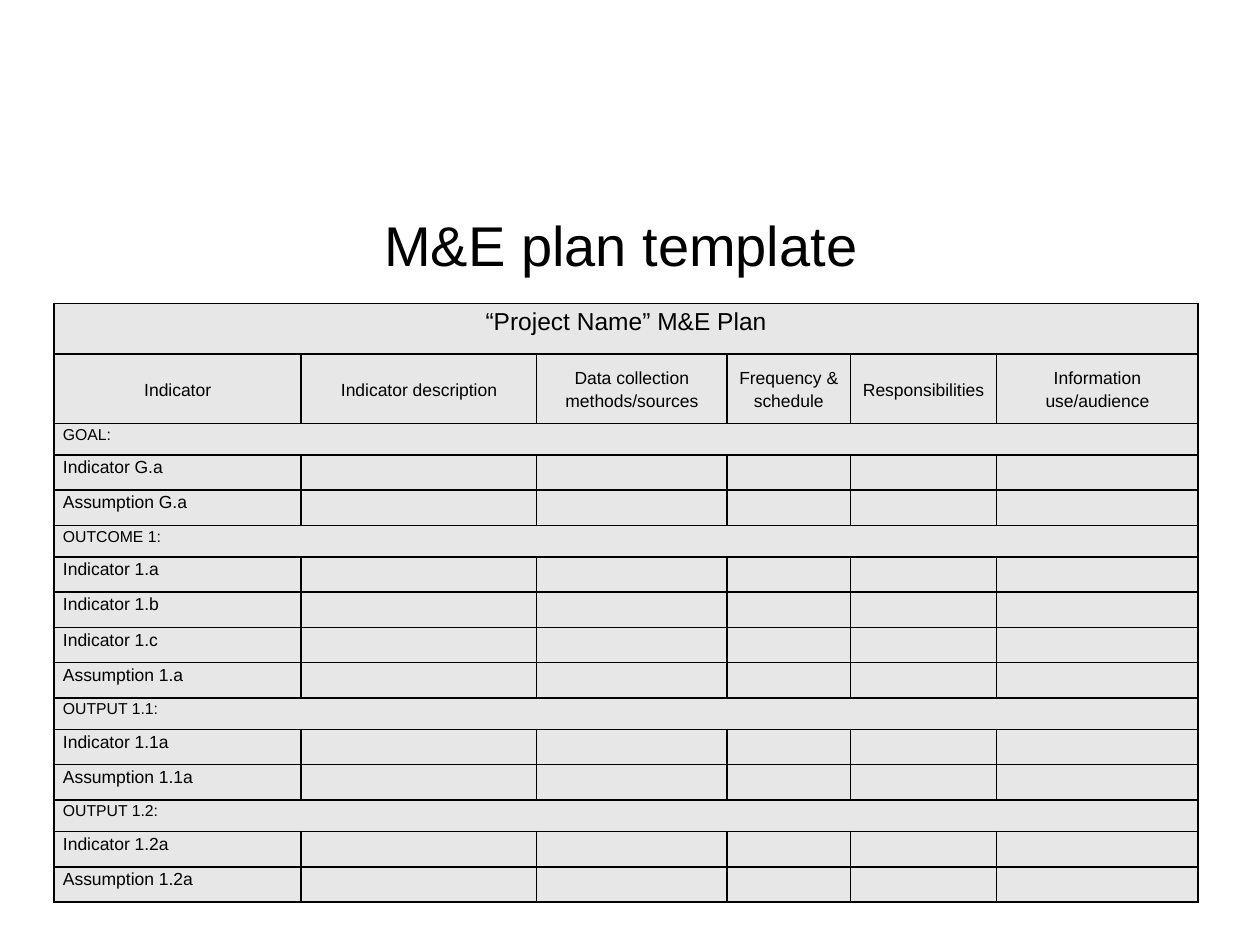
from pptx import Presentation
from pptx.dml.color import RGBColor
from pptx.enum.text import MSO_ANCHOR, PP_ALIGN
from pptx.oxml import parse_xml
from pptx.oxml.ns import nsdecls
from pptx.util import Inches, Pt

CENTER, LEFT = PP_ALIGN.CENTER, PP_ALIGN.LEFT
MIDDLE, TOP = MSO_ANCHOR.MIDDLE, MSO_ANCHOR.TOP
BLACK, GREY = "000000", "E7E7E7"

COLUMN_WIDTHS = [1.96, 1.87, 1.51, 0.98, 1.16, 1.6]
HEADINGS = [
    "Indicator",
    "Indicator description",
    "Data collection\nmethods/sources",
    "Frequency & schedule",
    "Responsibilities",
    "Information\nuse/audience",
]
SECTIONS = {
    "GOAL:": ["Indicator G.a", "Assumption G.a"],
    "OUTCOME 1:": ["Indicator 1.a", "Indicator 1.b", "Indicator 1.c", "Assumption 1.a"],
    "OUTPUT 1.1:": ["Indicator 1.1a", "Assumption 1.1a"],
    "OUTPUT 1.2:": ["Indicator 1.2a", "Assumption 1.2a"],
}


def write(frame, text, size, align=LEFT, line_spacing=None):
    """Fill a text frame, one paragraph per line of text."""
    for index, line in enumerate(text.split("\n")):
        para = frame.paragraphs[0] if index == 0 else frame.add_paragraph()
        para.alignment = align
        para.line_spacing = line_spacing
        if not line:
            # An empty cell still takes its height from the end-of-paragraph size
            para._p.get_or_add_endParaRPr().set("sz", str(size * 100))
            continue
        span = para.add_run()
        span.text = line
        span.font.name = "Arial"
        span.font.size = Pt(size)
        span.font.bold = False
        span.font.color.rgb = RGBColor.from_string(BLACK)


def style_cell(cell):
    """Set the margins, the 1 pt borders and the fill of a table cell."""
    cell.margin_left = cell.margin_right = Inches(0.07)
    cell.margin_top = cell.margin_bottom = 0
    properties = cell._tc.get_or_add_tcPr()
    for side in ("lnL", "lnR", "lnT", "lnB"):
        properties.append(parse_xml(
            f'<a:{side} {nsdecls("a")} w="{Pt(1)}"><a:solidFill>'
            f'<a:srgbClr val="{BLACK}"/></a:solidFill></a:{side}>'))
    cell.fill.solid()
    cell.fill.fore_color.rgb = RGBColor.from_string(GREY)


deck = Presentation()
deck.slide_width, deck.slide_height = Inches(10), Inches(7.5)
page = deck.slides.add_slide(deck.slide_layouts[6])

title = page.shapes.add_textbox(Inches(0.43), Inches(1.31), Inches(9), Inches(1.25))
title.text_frame.word_wrap = True
title.text_frame.vertical_anchor = MIDDLE
write(title.text_frame, "M&E plan template", 32, align=CENTER)

# Each row: height, cell texts, text size, alignment, anchor
# A row with a single text spans the whole table
rows = [
    (0.4, ["“Project Name” M&E Plan"], 14, CENTER, TOP),
    (0.55, HEADINGS, 10, CENTER, MIDDLE),
]
for section, entries in SECTIONS.items():
    rows.append((0.25, [section], 9, LEFT, TOP))
    for entry in entries:
        blanks = [""] * (len(COLUMN_WIDTHS) - 1)
        rows.append((0.28, [entry] + blanks, 10, LEFT, TOP))

table = page.shapes.add_table(
    len(rows), len(COLUMN_WIDTHS), Inches(0.43), Inches(2.41),
    Inches(sum(COLUMN_WIDTHS)), Inches(sum(row[0] for row in rows))).table
table.first_row = table.horz_banding = False
for column, width in zip(table.columns, COLUMN_WIDTHS):
    column.width = Inches(width)

for row, (height, texts, size, align, anchor) in zip(table.rows, rows):
    row.height = Inches(height)
    cells = list(row.cells)
    for cell in cells:
        style_cell(cell)
        cell.vertical_anchor = anchor
    if len(texts) == 1:
        cells[0].merge(cells[-1])
    for cell, text in zip(cells, texts):
        write(cell.text_frame, text, size, align=align, line_spacing=1.15)

deck.save("out.pptx")
